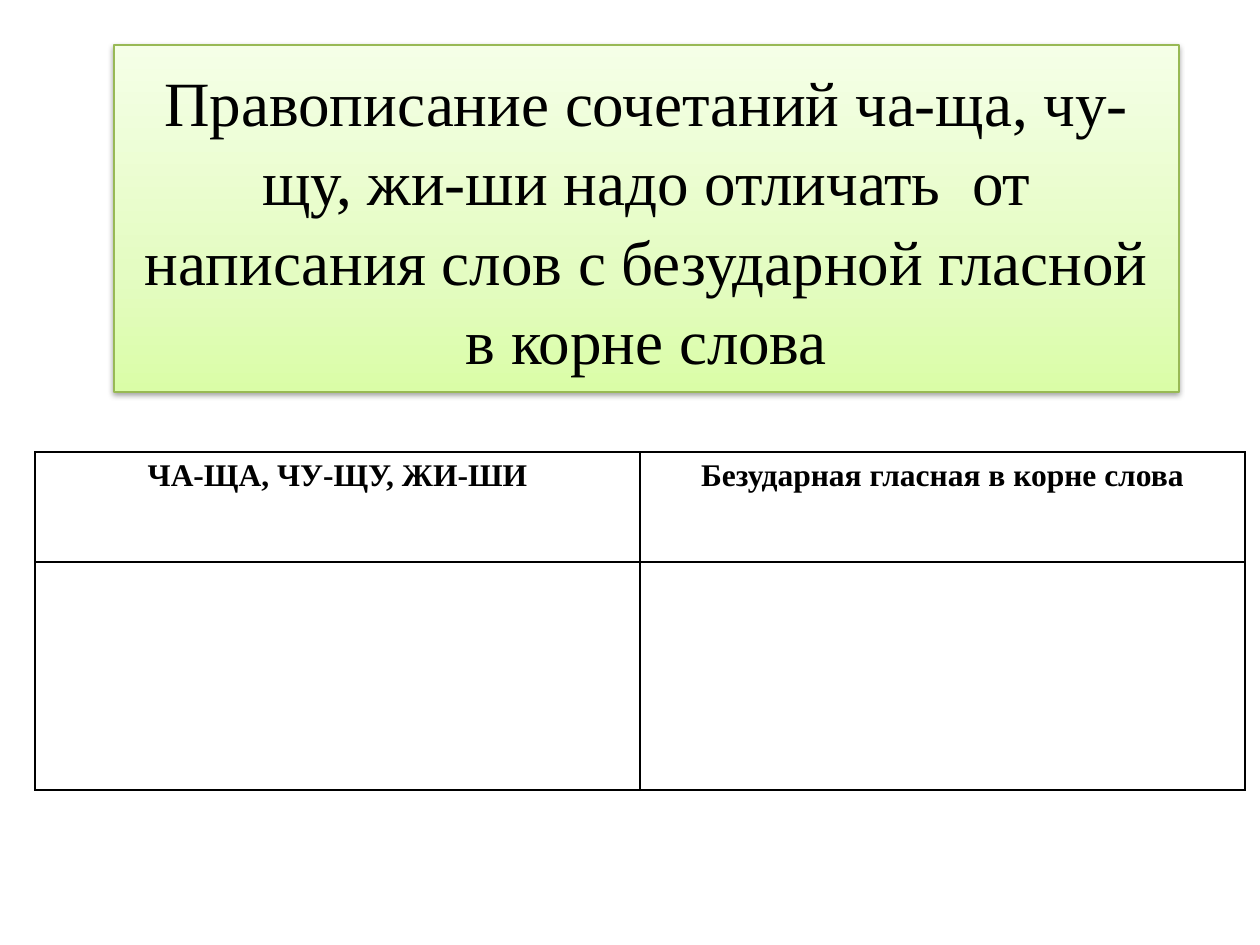
from dataclasses import dataclass

from lxml import etree
from pptx import Presentation
from pptx.dml.color import RGBColor
from pptx.enum.shapes import MSO_SHAPE as Shape
from pptx.enum.text import MSO_ANCHOR as Anchor, PP_ALIGN as Align
from pptx.oxml import parse_xml
from pptx.oxml.ns import nsdecls, qn
from pptx.util import Inches, Pt

PX_PER_INCH = 126


@dataclass(frozen=True)
class Theme:
    font: str = "Times New Roman"
    ink: str = "000000"
    box_line: str = "98B955"
    # Position in percent and colour, from the bottom up
    box_stops: tuple = ((0, "DAFDA7"), (35, "E4FCC2"), (100, "F5FFE7"))
    title_size: int = 36
    head_size: int = 18


THEME = Theme()

TITLE = ("Правописание сочетаний ча-ща, чу-щу, жи-ши надо отличать  от "
         "написания слов с безударной гласной в корне слова")
HEADINGS = ("ЧА-ЩА, ЧУ-ЩУ, ЖИ-ШИ", "Безударная гласная в корне слова")


def px(length):
    return Inches(length / PX_PER_INCH)


def write(frame, text, *, size, bold=False, spacing=1.0):
    """Put one centred paragraph into a text frame."""
    frame.word_wrap = True
    para = frame.paragraphs[0]
    para.alignment = Align.CENTER
    para.line_spacing = spacing
    span = para.add_run()
    span.text = text
    span.font.name = THEME.font
    span.font.size = Pt(size)
    span.font.bold = bold
    span.font.color.rgb = RGBColor.from_string(THEME.ink)


def shade(box, stops):
    """Give a box a vertical gradient that starts at the bottom."""
    box.fill.gradient()
    box.fill.gradient_angle = 90
    stop_list = box.fill._fill._gradFill.find(qn("a:gsLst"))
    for old in list(stop_list):
        stop_list.remove(old)
    for percent, colour in stops:
        stop = etree.SubElement(stop_list, qn("a:gs"), pos=str(percent * 1000))
        etree.SubElement(stop, qn("a:srgbClr"), val=colour)


def drop_shadow(box):
    """Give a box a soft shadow straight below it."""
    box.shadow.inherit = False
    effects = box._element.spPr.find(qn("a:effectLst"))
    effects.append(parse_xml(
        f'<a:outerShdw {nsdecls("a")} blurRad="{Pt(3.1)}" dist="{Pt(1.6)}" '
        'dir="5400000" rotWithShape="0"><a:srgbClr val="000000">'
        '<a:alpha val="38000"/></a:srgbClr></a:outerShdw>'))


def add_title_box(page, text, left, top, width, height):
    box = page.shapes.add_shape(
        Shape.RECTANGLE, px(left), px(top), px(width), px(height))
    shade(box, THEME.box_stops)
    box.line.color.rgb = RGBColor.from_string(THEME.box_line)
    box.line.width = Pt(0.75)
    drop_shadow(box)
    box.text_frame.vertical_anchor = Anchor.MIDDLE
    write(box.text_frame, text, size=THEME.title_size, spacing=1.05)


def outline(cell):
    """Draw all four borders of a cell; they precede its fill."""
    props = cell._tc.get_or_add_tcPr()
    for index, side in enumerate(("lnL", "lnR", "lnT", "lnB")):
        props.insert(index, parse_xml(
            f'<a:{side} {nsdecls("a")} w="{Pt(1)}"><a:solidFill>'
            f'<a:srgbClr val="{THEME.ink}"/></a:solidFill></a:{side}>'))


def add_word_table(page, headings, left, top, column_width, row_heights):
    table = page.shapes.add_table(
        len(row_heights), len(headings), px(left), px(top),
        px(column_width * len(headings)), px(sum(row_heights))).table
    table.first_row = table.horz_banding = False
    for column in table.columns:
        column.width = px(column_width)
    for row, height in zip(table.rows, row_heights):
        row.height = px(height)
    for cell in table.iter_cells():
        cell.fill.background()
        outline(cell)
    for cell, heading in zip(table.rows[0].cells, headings):
        write(cell.text_frame, heading, size=THEME.head_size, bold=True)


def main():
    deck = Presentation()
    deck.slide_width, deck.slide_height = Inches(10), Inches(7.5)
    page = deck.slides.add_slide(deck.slide_layouts[6])

    # Rule at the top
    add_title_box(page, TITLE, 114, 45, 1065, 347)
    # Table for sorting words
    add_word_table(page, HEADINGS, 35, 452, 605, (110, 228))

    deck.save("out.pptx")


if __name__ == "__main__":
    main()
